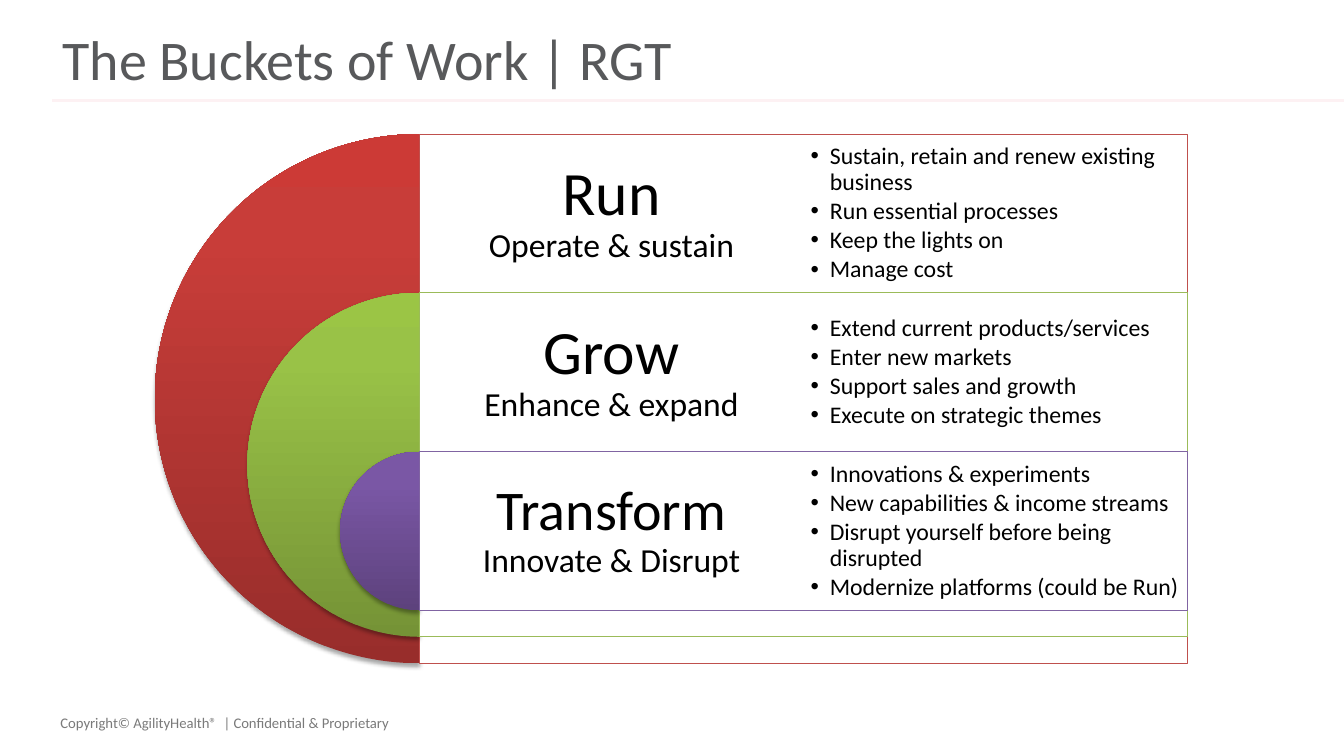
from dataclasses import dataclass

from lxml import etree
from pptx import Presentation
from pptx.dml.color import RGBColor
from pptx.enum.shapes import MSO_CONNECTOR, MSO_SHAPE
from pptx.enum.text import MSO_ANCHOR, PP_ALIGN
from pptx.oxml import parse_xml
from pptx.oxml.ns import nsdecls, qn
from pptx.util import Inches, Pt

PIE, RECTANGLE = MSO_SHAPE.PIE, MSO_SHAPE.RECTANGLE
STRAIGHT = MSO_CONNECTOR.STRAIGHT
MIDDLE, TOP = MSO_ANCHOR.MIDDLE, MSO_ANCHOR.TOP
LEFT, CENTER = PP_ALIGN.LEFT, PP_ALIGN.CENTER


@dataclass(frozen=True)
class Theme:
    font: str = "Calibri"
    title: str = "58595B"
    body: str = "000000"
    footer: str = "7A7A7A"
    rule: str = "FDF1F3"
    panel: str = "FFFFFF"
    title_size: float = 40
    subtitle_size: float = 24
    bullet_size: float = 17
    footer_size: float = 10.5


THEME = Theme()

# Geometry of the nested buckets, in inches
AXIS_X, BUCKETS_TOP = 4.16, 1.33
OUTER_DIAMETER, DIAMETER_STEP = 5.25, 0.35
ROW_HEIGHT = 0.3 * OUTER_DIAMETER
PANEL_WIDTH = 7.62
HALF_PANEL = PANEL_WIDTH / 2

BUCKETS = [
    {
        "name": "Run", "size": 44, "motto": "Operate & sustain", "inset": 0.18,
        "outline": "BF504D", "gradient": ("982D2B", "C83D39", "CC3A36"),
        "bullets": ["Sustain, retain and renew existing business",
                    "Run essential processes", "Keep the lights on", "Manage cost"],
    },
    {
        "name": "Grow", "size": 44, "motto": "Enhance & expand", "inset": 0.18,
        "outline": "9BBB59", "gradient": ("759336", "99C247", "9BC545"),
        "bullets": ["Extend current products/services", "Enter new markets",
                    "Support sales and growth", "Execute on strategic themes"],
    },
    {
        "name": "Transform", "size": 40, "motto": "Innovate & Disrupt", "inset": 0.17,
        "outline": "8064A2", "gradient": ("5D427D", "7A57A5", "7A56A7"),
        "bullets": ["Innovations & experiments", "New capabilities & income streams",
                    "Disrupt yourself before being disrupted",
                    "Modernize platforms (could be Run)"],
    },
]


def rgb(color):
    return RGBColor.from_string(color)


def box(left, top, width, height):
    return [Inches(length) for length in (left, top, width, height)]


def set_all(target, formats):
    for name, value in formats.items():
        setattr(target, name, value)


def style_font(font, size, color):
    set_all(font, {"name": THEME.font, "size": Pt(size)})
    font.color.rgb = rgb(color)


def format_frame(frame, anchor, inset_x, inset_y):
    set_all(frame, {
        "word_wrap": True, "vertical_anchor": anchor,
        "margin_left": Inches(inset_x), "margin_right": Inches(inset_x),
        "margin_top": Inches(inset_y), "margin_bottom": Inches(inset_y),
    })


def add_text_frame(slide, bounds, anchor, inset):
    frame = slide.shapes.add_textbox(*box(*bounds)).text_frame
    format_frame(frame, anchor, inset, inset)
    return frame


def add_title(slide, text):
    title = slide.shapes.title
    set_all(title, dict(zip(("left", "top", "width", "height"), box(0.52, 0.27, 12.29, 0.7))))
    format_frame(title.text_frame, MIDDLE, 0.1, 0.05)
    title.text_frame.text = text
    heading = title.text_frame.paragraphs[0]
    set_all(heading, {"alignment": LEFT, "line_spacing": 0.9})
    style_font(heading.runs[0].font, THEME.title_size, THEME.title)


def add_title_rule(slide, slide_width):
    rule = slide.shapes.add_connector(STRAIGHT, Inches(0.52), Inches(1), slide_width, Inches(1))
    rule.line.color.rgb = rgb(THEME.rule)
    rule.line.width = Pt(2)
    etree.SubElement(rule._element.spPr, qn("a:effectLst"))


def add_footer(slide, text):
    frame = add_text_frame(slide, (0.6, 7.08, 4.5, 0.28), TOP, 0)
    frame.text = text
    style_font(frame.paragraphs[0].runs[0].font, THEME.footer_size, THEME.footer)


def add_half_disc(slide, top, diameter, gradient):
    """Draw the left half of a disc, shaded upwards and with a soft shadow below."""
    disc = slide.shapes.add_shape(
        PIE, *box(AXIS_X - diameter / 2, top, diameter, diameter))
    disc.adjustments[0], disc.adjustments[1] = 54, 162
    disc.line.fill.background()
    stops = "".join(
        f'<a:gs pos="{position}"><a:srgbClr val="{color}"/></a:gs>'
        for position, color in zip((0, 80000, 100000), gradient))
    outline = disc._element.spPr.find(qn("a:ln"))
    outline.addprevious(parse_xml(
        f'<a:gradFill {nsdecls("a")} rotWithShape="1"><a:gsLst>{stops}</a:gsLst>'
        '<a:lin ang="16200000" scaled="0"/></a:gradFill>'))
    outline.addnext(parse_xml(
        f'<a:effectLst {nsdecls("a")}><a:outerShdw blurRad="{Pt(3.1)}" dist="{Pt(1.8)}" '
        'dir="5400000" rotWithShape="0"><a:srgbClr val="000000"><a:alpha val="35000"/>'
        '</a:srgbClr></a:outerShdw></a:effectLst>'))


def add_panel(slide, top, height, outline):
    panel = slide.shapes.add_shape(RECTANGLE, *box(AXIS_X, top, PANEL_WIDTH, height))
    panel.shadow.inherit = False
    panel.fill.solid()
    panel.fill.fore_color.rgb = rgb(THEME.panel)
    panel.line.color.rgb = rgb(outline)
    panel.line.width = Pt(0.75)


def add_heading(slide, top, bucket):
    frame = add_text_frame(
        slide, (AXIS_X, top, HALF_PANEL, ROW_HEIGHT), MIDDLE, bucket["inset"])
    heading = frame.paragraphs[0]
    set_all(heading, {"alignment": CENTER, "line_spacing": 0.9})
    name = heading.add_run()
    name.text = bucket["name"]
    style_font(name.font, bucket["size"], THEME.body)
    heading.add_line_break()
    motto = heading.add_run()
    motto.text = bucket["motto"]
    style_font(motto.font, THEME.subtitle_size, THEME.body)


def add_bullets(slide, top, bullets):
    frame = add_text_frame(
        slide, (AXIS_X + HALF_PANEL, top, HALF_PANEL, ROW_HEIGHT), MIDDLE, 0.07)
    for index, text in enumerate(bullets):
        item = frame.add_paragraph() if index else frame.paragraphs[0]
        properties = item._p.get_or_add_pPr()
        properties.set("marL", str(Inches(0.19)))
        properties.set("indent", str(-Inches(0.19)))
        color = etree.SubElement(properties, qn("a:buClr"))
        etree.SubElement(color, qn("a:srgbClr"), val=THEME.body)
        etree.SubElement(properties, qn("a:buFont"), typeface="Arial")
        etree.SubElement(properties, qn("a:buChar"), char="•")
        set_all(item, {"line_spacing": 0.9, "space_before": Pt(2.5 if index else 0)})
        run = item.add_run()
        run.text = text
        style_font(run.font, THEME.bullet_size, THEME.body)


def add_bucket(slide, index, bucket):
    top = BUCKETS_TOP + index * ROW_HEIGHT
    diameter = OUTER_DIAMETER * (1 - index * DIAMETER_STEP)
    add_half_disc(slide, top, diameter, bucket["gradient"])
    add_panel(slide, top, diameter, bucket["outline"])
    add_heading(slide, top, bucket)
    add_bullets(slide, top, bucket["bullets"])


def main():
    deck = Presentation()
    deck.slide_width, deck.slide_height = Inches(13.33), Inches(7.5)
    slide = deck.slides.add_slide(deck.slide_layouts[5])
    add_title_rule(slide, deck.slide_width)
    add_footer(slide, "Copyright© AgilityHealth®  | Confidential & Proprietary")
    add_title(slide, "The Buckets of Work | RGT")
    for index, bucket in enumerate(BUCKETS):
        add_bucket(slide, index, bucket)
    deck.save("out.pptx")


if __name__ == "__main__":
    main()
